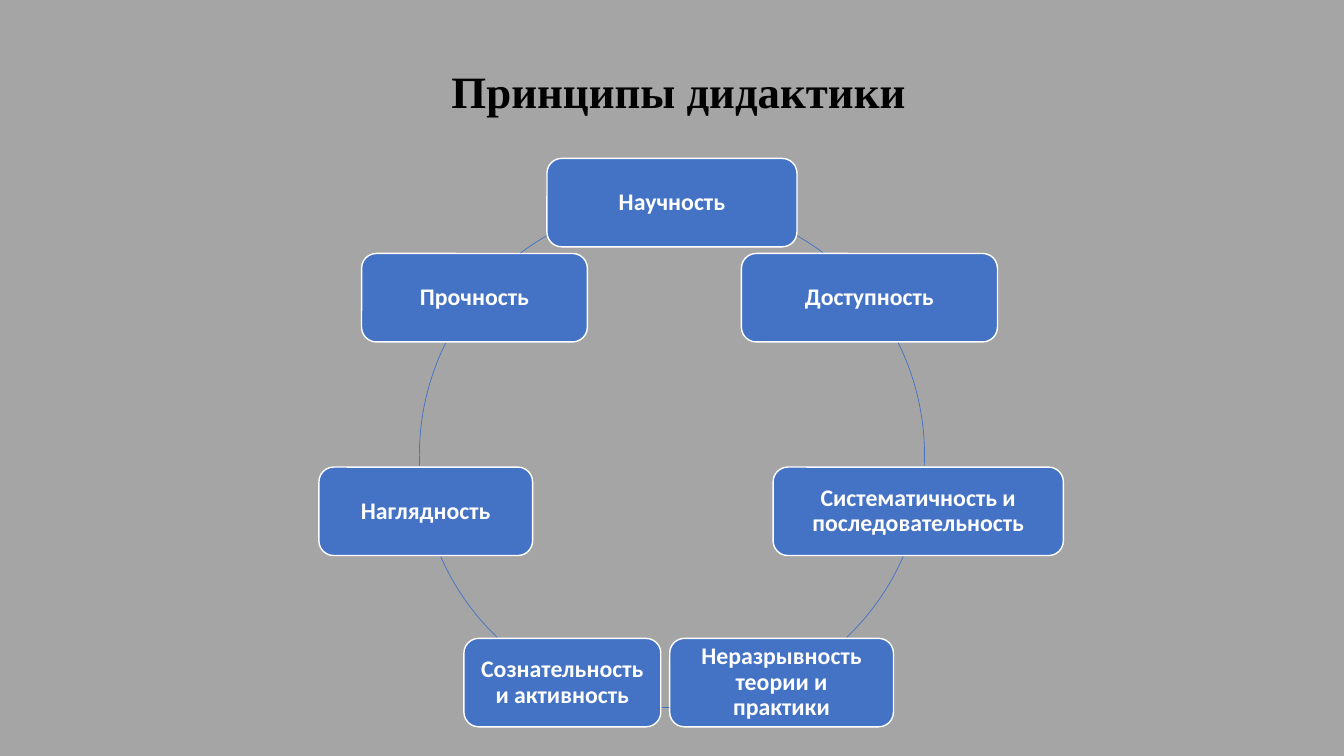
from dataclasses import dataclass
from math import cos, radians, sin

from pptx import Presentation
from pptx.dml.color import RGBColor
from pptx.enum.shapes import MSO_SHAPE
from pptx.enum.text import MSO_ANCHOR, MSO_AUTO_SIZE, PP_ALIGN
from pptx.slide import Slide
from pptx.text.text import TextFrame
from pptx.util import Inches, Pt

GRAY = RGBColor(0xA5, 0xA5, 0xA5)
BLUE = RGBColor(0x44, 0x72, 0xC4)
WHITE = RGBColor(0xFF, 0xFF, 0xFF)
BLACK = RGBColor(0x00, 0x00, 0x00)

SLIDE_WIDTH = Inches(13.33)
SLIDE_HEIGHT = Inches(7.5)
COLUMN = SLIDE_WIDTH / 100
ROW = SLIDE_HEIGHT / 100

RING_X = 50 * COLUMN
RING_Y = 60.2 * ROW
RING_RADIUS = 33.4 * ROW
CARD_HEIGHT = 11.7 * ROW
CARD_INSET = Inches(0.11)
ARC_UNITS_PER_DEGREE = 0.6


@dataclass(frozen=True)
class Principle:
    name: str
    columns: float
    arc_start: float
    arc_end: float


PRINCIPLES = [
    Principle("Научность", 18.6, 299.75, 306.85),
    Principle("Доступность", 19.05, 333.6, 2.4),
    Principle("Систематичность и последовательность", 21.6, 23.7, 46.2),
    Principle("Неразрывность теории и практики", 16.65, 90.6, 92.4),
    Principle("Сознательность и активность", 14.65, 133.8, 156.3),
    Principle("Наглядность", 15.9, 177.6, 206.4),
    Principle("Прочность", 16.8, 233.15, 240.25),
]


def write_text(frame: TextFrame, text: str, font_name: str, size: int, color: RGBColor) -> None:
    frame.text = text
    frame.word_wrap = True
    frame.auto_size = MSO_AUTO_SIZE.NONE
    paragraph = frame.paragraphs[0]
    paragraph.alignment = PP_ALIGN.CENTER
    paragraph.line_spacing = 0.9
    paragraph.font.name = font_name
    paragraph.font.size = Pt(size)
    paragraph.font.bold = True
    paragraph.font.color.rgb = color


def add_title(slide: Slide, text: str) -> None:
    title = slide.shapes.title
    title.left, title.top = int(3 * COLUMN), int(3.9 * ROW)
    title.width, title.height = int(95 * COLUMN), int(11.7 * ROW)
    write_text(title.text_frame, text, "Times New Roman", 32, BLACK)
    title.text_frame.vertical_anchor = MSO_ANCHOR.BOTTOM
    title.text_frame.margin_bottom = 0


def add_card(slide: Slide, principle: Principle, angle: float) -> None:
    width = principle.columns * COLUMN
    left = RING_X + RING_RADIUS * sin(angle) - width / 2
    top = RING_Y - RING_RADIUS * cos(angle) - CARD_HEIGHT / 2
    card = slide.shapes.add_shape(
        MSO_SHAPE.ROUNDED_RECTANGLE, int(left), int(top), int(width), int(CARD_HEIGHT)
    )
    card.shadow.inherit = False
    card.fill.solid()
    card.fill.fore_color.rgb = BLUE
    card.line.color.rgb = WHITE
    card.line.width = Pt(1)
    frame = card.text_frame
    write_text(frame, principle.name, "Calibri", 17, WHITE)
    frame.vertical_anchor = MSO_ANCHOR.MIDDLE
    frame.margin_left = frame.margin_right = CARD_INSET
    frame.margin_top = frame.margin_bottom = CARD_INSET


def add_arc(slide: Slide, principle: Principle) -> None:
    diameter = int(2 * RING_RADIUS)
    arc = slide.shapes.add_shape(
        MSO_SHAPE.ARC, int(RING_X - RING_RADIUS), int(RING_Y - RING_RADIUS), diameter, diameter
    )
    arc.adjustments[0] = principle.arc_start * ARC_UNITS_PER_DEGREE
    arc.adjustments[1] = principle.arc_end * ARC_UNITS_PER_DEGREE
    arc.shadow.inherit = False
    arc.fill.background()
    arc.line.color.rgb = BLUE
    arc.line.width = Pt(0.5)


def main() -> None:
    presentation = Presentation()
    presentation.slide_width = SLIDE_WIDTH
    presentation.slide_height = SLIDE_HEIGHT
    slide = presentation.slides.add_slide(presentation.slide_layouts.get_by_name("Title Only"))
    slide.background.fill.solid()
    slide.background.fill.fore_color.rgb = GRAY
    add_title(slide, "Принципы дидактики")
    for index, principle in enumerate(PRINCIPLES):
        add_card(slide, principle, radians(360 * index / len(PRINCIPLES)))
        add_arc(slide, principle)
    presentation.save("out.pptx")


if __name__ == "__main__":
    main()
